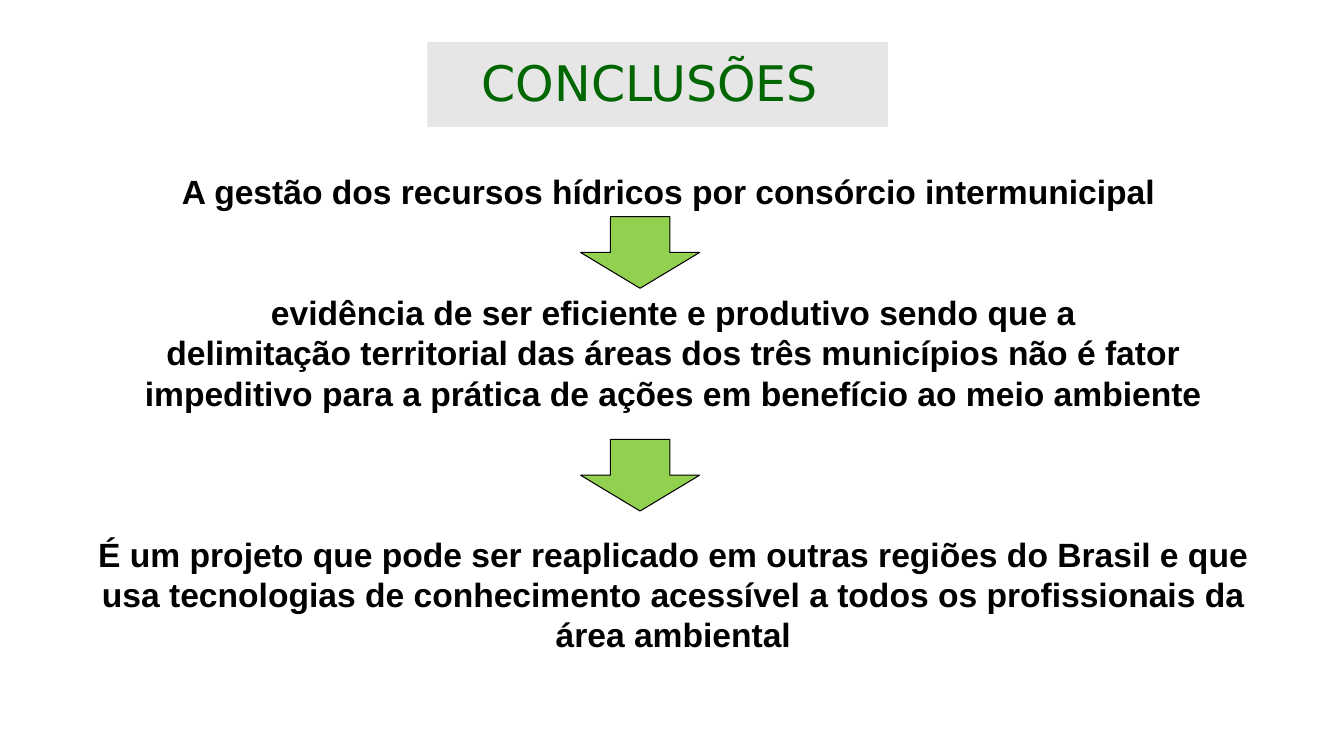
from lxml import etree
from pptx import Presentation
from pptx.dml.color import RGBColor as RGB
from pptx.enum.shapes import MSO_SHAPE as Shape
from pptx.enum.text import MSO_ANCHOR as Anchor, PP_ALIGN as Align
from pptx.oxml.ns import qn
from pptx.util import Pt

HUES = {
    "paper": "FFFFFF",
    "ink": "000000",
    "band": "E7E6E6",
    "title": "006600",
    "arrow": "92D050",
}
# Each statement with the space above it
POINTS = [
    ("A gestão dos recursos hídricos por consórcio intermunicipal ", 0),
    ("evidência de ser eficiente e produtivo sendo que a", 57.6),
    ("delimitação territorial das áreas dos três municípios não é fator "
     "impeditivo para a prática de ações em benefício ao meio ambiente", 0),
    ("É um projeto que pode ser reaplicado em outras regiões do Brasil e que "
     "usa tecnologias de conhecimento acessível a todos os profissionais da "
     "área ambiental", 86.4),
]


def hue(name):
    return RGB.from_string(HUES[name])


def add_block(slide, kind, box, fill):
    block = slide.shapes.add_shape(kind, *(Pt(n) for n in box))
    block.shadow.inherit = False
    block.fill.solid()
    block.fill.fore_color.rgb = hue(fill)
    block.line.fill.background()
    return block


def style(para, face, size, color, bold=False):
    para.alignment = Align.CENTER
    font = para.runs[0].font
    font.name, font.size, font.bold = face, Pt(size), bold
    font.color.rgb = hue(color)


def add_title(slide, box):
    frame = add_block(slide, Shape.RECTANGLE, box, "band").text_frame
    frame.word_wrap = True
    frame.vertical_anchor = Anchor.TOP
    frame.margin_top = Pt(7.2)
    frame.text = "CONCLUSÕES "
    style(frame.paragraphs[0], "DejaVu Sans", 35, "title")


def add_body(slide, box):
    panel = add_block(slide, Shape.RECTANGLE, box, "paper")
    color = panel.fill._xPr.find(".//" + qn("a:srgbClr"))
    etree.SubElement(color, qn("a:alpha")).set("val", "69000")
    frame = panel.text_frame
    frame.word_wrap = True
    frame.vertical_anchor = Anchor.MIDDLE
    frame.text = "\n".join(text for text, _ in POINTS)
    for para, (_, gap) in zip(frame.paragraphs, POINTS):
        style(para, "Arial", 24, "ink", bold=True)
        para.line_spacing = Pt(28.8)
        para.space_before = Pt(gap)


def add_arrow(slide, box):
    arrow = add_block(slide, Shape.DOWN_ARROW, box, "arrow")
    arrow.line.color.rgb = hue("ink")
    arrow.line.width = Pt(0.75)


def main():
    deck = Presentation()
    deck.slide_width, deck.slide_height = Pt(960), Pt(540)
    slide = deck.slides.add_slide(deck.slide_layouts[6])

    # Statements behind, then heading
    add_body(slide, (57.6, 116.6, 846.7, 356.4))
    add_title(slide, (305.3, 30.2, 329, 60.5))

    # Arrows between the statements
    for top in (154.8, 313.9):
        add_arrow(slide, (414.7, top, 85, 51.1))

    deck.save("out.pptx")


if __name__ == "__main__":
    main()
